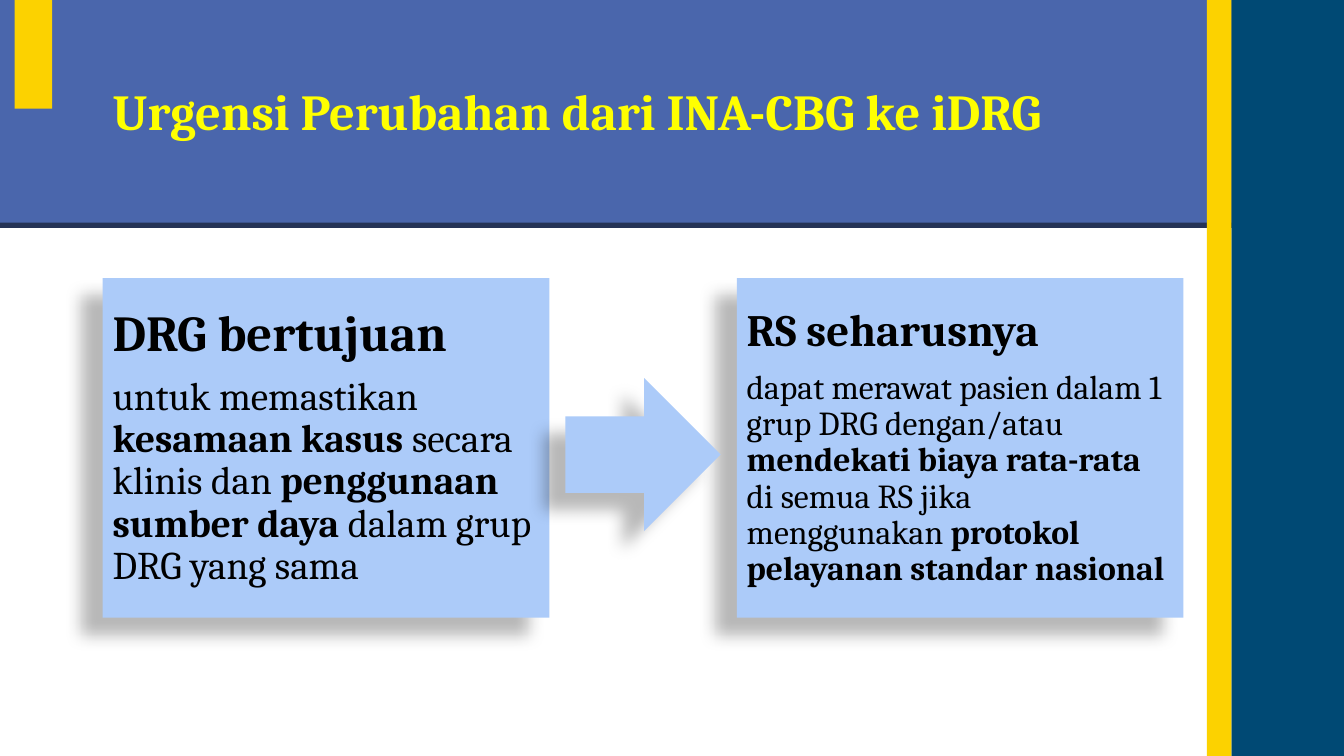
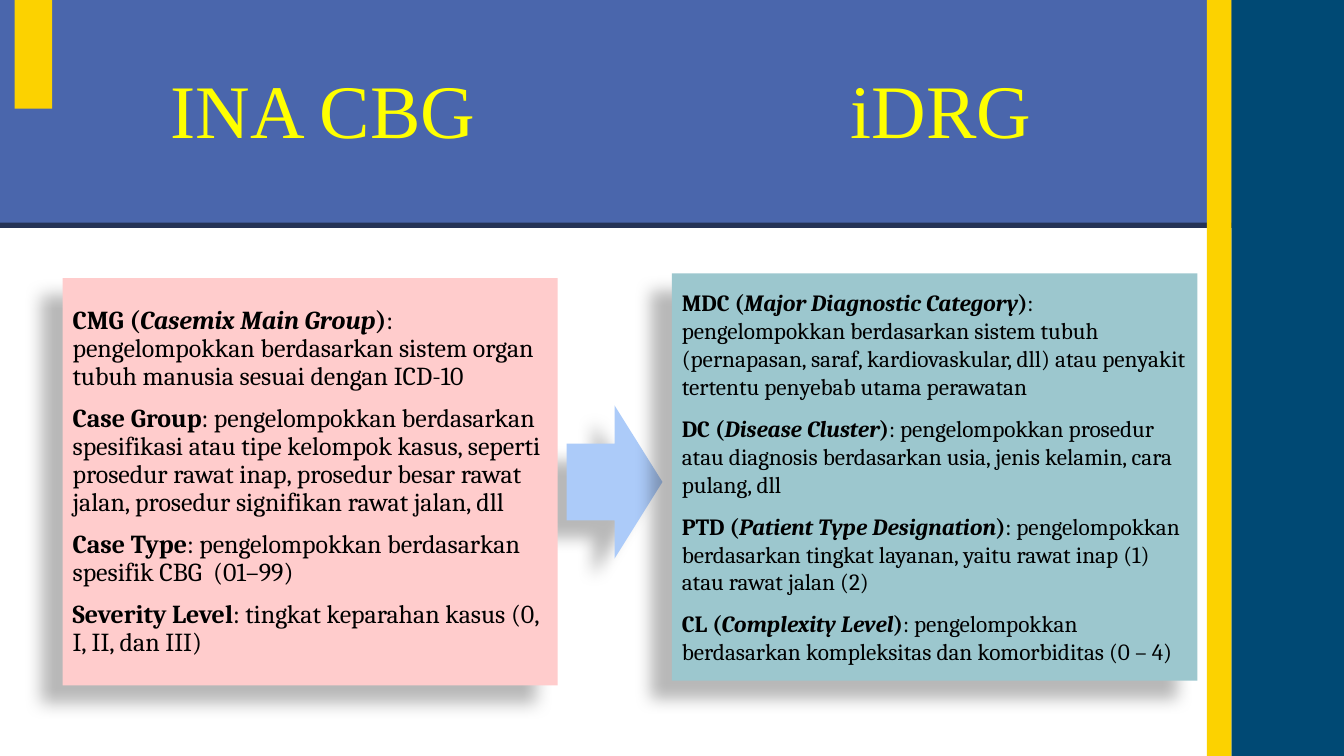
from dataclasses import dataclass
from typing import NamedTuple

from lxml import etree
from pptx import Presentation, util as u
from pptx.dml.color import RGBColor
from pptx.enum import shapes, text
from pptx.oxml import ns

Pt = u.Pt
WIDTH, HEIGHT = 960, 540
COLORS = {
    "band": "4A66AC", "band_edge": "253356", "gold": "FCD200", "teal": "004974",
    "title": "FFFF00", "ink": "000000",
    "blue": "ACCBF9", "pink": "FFCCCC", "aqua": "9CC7CE",
}
FRAME_FORMAT = {"word_wrap": True, "auto_size": text.MSO_AUTO_SIZE.NONE,
                "vertical_anchor": text.MSO_ANCHOR.MIDDLE}
SHADOW = {"blurRad": Pt(11.8), "dist": Pt(19.7), "dir": 141 * 60000,
          "algn": "tr", "rotWithShape": 0}
SHADOW_ALPHA = 28000
BODY_FONT = "Cambria"
LEFT, CENTER = text.PP_ALIGN.LEFT, text.PP_ALIGN.CENTER


class Box(NamedTuple):
    left: float
    top: float
    width: float
    height: float


class Run(NamedTuple):
    words: str
    bold: bool = False
    italic: bool = False


@dataclass(frozen=True)
class Para:
    runs: list[Run]
    size: float


@dataclass(frozen=True)
class Title:
    words: str
    left: float
    width: float
    size: float
    font: str
    bold: bool = False
    align: text.PP_ALIGN = CENTER


@dataclass(frozen=True)
class Panel:
    box: Box
    color: str
    paras: list[Para]
    line_spacing: float = 0.9


@dataclass(frozen=True)
class Arrow:
    box: Box


FRAME = [
    (Box(0, 0, WIDTH, 161), "band"),
    (Box(0, 159.1, WIDTH, 3.8), "band_edge"),
    (Box(10.4, 0, 26.8, 77.6), "gold"),
    (Box(879.6, 0, WIDTH - 879.6, HEIGHT), "teal"),
    (Box(862, 0, 17.6, HEIGHT), "gold"),
]


def set_all(target: object, values: dict) -> None:
    for name, value in values.items():
        setattr(target, name, value)


def add_flat(slide, box: Box, color: str, kind=shapes.MSO_SHAPE.RECTANGLE):
    """Add a borderless shape in one colour, without shadow."""
    shape = slide.shapes.add_shape(kind, *map(Pt, box))
    shape.shadow.inherit = False
    shape.fill.solid()
    shape.fill.fore_color.rgb = RGBColor.from_string(COLORS[color])
    shape.line.fill.background()
    return shape


def add_shadow(shape) -> None:
    effects = shape._element.spPr.find(ns.qn("a:effectLst"))
    outer = etree.SubElement(effects, ns.qn("a:outerShdw"),
                             {key: str(value) for key, value in SHADOW.items()})
    color = etree.SubElement(outer, ns.qn("a:srgbClr"), val=COLORS["ink"])
    etree.SubElement(color, ns.qn("a:alpha"), val=str(SHADOW_ALPHA))


def write(shape, paras: list[Para], font: str, color: str,
          align: text.PP_ALIGN, line_spacing: float) -> None:
    frame = shape.text_frame
    set_all(frame, FRAME_FORMAT)
    for index, para in enumerate(paras):
        line = frame.add_paragraph() if index else frame.paragraphs[0]
        set_all(line, {"alignment": align, "line_spacing": line_spacing,
                       "space_before": Pt(10 if index else 0)})
        for part in para.runs:
            run = line.add_run()
            run.text = part.words
            set_all(run.font, {"name": font, "size": Pt(para.size),
                               "bold": part.bold, "italic": part.italic})
            run.font.color.rgb = RGBColor.from_string(COLORS[color])


def draw_title(slide, title: Title) -> None:
    box = Box(title.left, 54, title.width, 54.7)
    label = slide.shapes.add_textbox(*map(Pt, box))
    write(label, [Para([Run(title.words, title.bold)], title.size)],
          title.font, "title", title.align, 0.9)


def draw_panel(slide, panel: Panel) -> None:
    shape = add_flat(slide, panel.box, panel.color)
    add_shadow(shape)
    write(shape, panel.paras, BODY_FONT, "ink", LEFT, panel.line_spacing)


def draw_arrow(slide, arrow: Arrow) -> None:
    add_shadow(add_flat(slide, arrow.box, "blue", shapes.MSO_SHAPE.RIGHT_ARROW))


DRAW = {Title: draw_title, Panel: draw_panel, Arrow: draw_arrow}


def heading(words: str, size: float) -> Para:
    return Para([Run(words, True)], size)


def definition(term: str, meaning: str, size: float, full_name: str = "") -> Para:
    """Bold term, with its full name in italic brackets, then the meaning."""
    if full_name:
        runs = [Run(f"{term} (", True), Run(full_name, True, True), Run(")", True)]
    else:
        runs = [Run(term, True)]
    return Para([*runs, Run(f": {meaning}")], size)


URGENCY = [
    Title("Urgensi Perubahan dari INA-CBG ke iDRG", 73.4, 750.2, 36,
          BODY_FONT, True, LEFT),
    Panel(Box(73.4, 198.7, 319, 242.6), "blue", [
        heading("DRG bertujuan", 36),
        Para([Run("untuk memastikan "), Run("kesamaan kasus ", True),
              Run("secara klinis dan "), Run("penggunaan sumber daya ", True),
              Run("dalam grup DRG yang sama")], 28),
    ]),
    Panel(Box(526.3, 198.7, 319, 242.6), "blue", [
        heading("RS seharusnya", 32),
        Para([Run("dapat merawat pasien dalam 1 grup DRG dengan/atau "),
              Run("mendekati biaya rata-rata ", True),
              Run("di semua RS jika menggunakan "),
              Run("protokol pelayanan standar nasional", True)], 24),
    ]),
    Arrow(Box(403.9, 270, 110.9, 109.4)),
]

CBG_SIZE, DRG_SIZE = 18.5, 16.6
COMPARISON = [
    Title("INA CBG", 73.4, 314.6, 54, "Times New Roman"),
    Title("iDRG", 514.8, 314.6, 54, "Times New Roman"),
    Arrow(Box(404.8, 289.6, 68.4, 109.4)),
    Panel(Box(44.8, 198.7, 353.5, 290.9), "pink", [
        definition("CMG", "pengelompokkan berdasarkan sistem organ tubuh manusia "
                   "sesuai dengan ICD-10", CBG_SIZE, "Casemix Main Group"),
        definition("Case Group", "pengelompokkan berdasarkan spesifikasi atau tipe "
                   "kelompok kasus, seperti prosedur rawat inap, prosedur besar "
                   "rawat jalan, prosedur signifikan rawat jalan, dll", CBG_SIZE),
        definition("Case Type", "pengelompokkan berdasarkan spesifik CBG  (01–99)",
                   CBG_SIZE),
        definition("Severity Level", "tingkat keparahan kasus (0, I, II, dan III)",
                   CBG_SIZE),
    ]),
    Panel(Box(480, 195.3, 375.3, 290.9), "aqua", [
        definition("MDC", "pengelompokkan berdasarkan sistem tubuh (pernapasan, "
                   "saraf, kardiovaskular, dll) atau penyakit tertentu penyebab "
                   "utama perawatan", DRG_SIZE, "Major Diagnostic Category"),
        definition("DC", "pengelompokkan prosedur atau diagnosis berdasarkan usia, "
                   "jenis kelamin, cara pulang, dll", DRG_SIZE, "Disease Cluster"),
        definition("PTD", "pengelompokkan berdasarkan tingkat layanan, yaitu rawat "
                   "inap (1) atau rawat jalan (2)", DRG_SIZE,
                   "Patient Type Designation"),
        definition("CL", "pengelompokkan berdasarkan kompleksitas dan komorbiditas "
                   "(0 – 4)", DRG_SIZE, "Complexity Level"),
    ], line_spacing=1.0),
]


def main() -> None:
    deck = Presentation()
    set_all(deck, {"slide_width": Pt(WIDTH), "slide_height": Pt(HEIGHT)})
    for parts in (URGENCY, COMPARISON):
        slide = deck.slides.add_slide(deck.slide_layouts[6])
        for box, color in FRAME:
            add_flat(slide, box, color)
        for part in parts:
            DRAW[type(part)](slide, part)
    deck.save("out.pptx")


if __name__ == "__main__":
    main()
